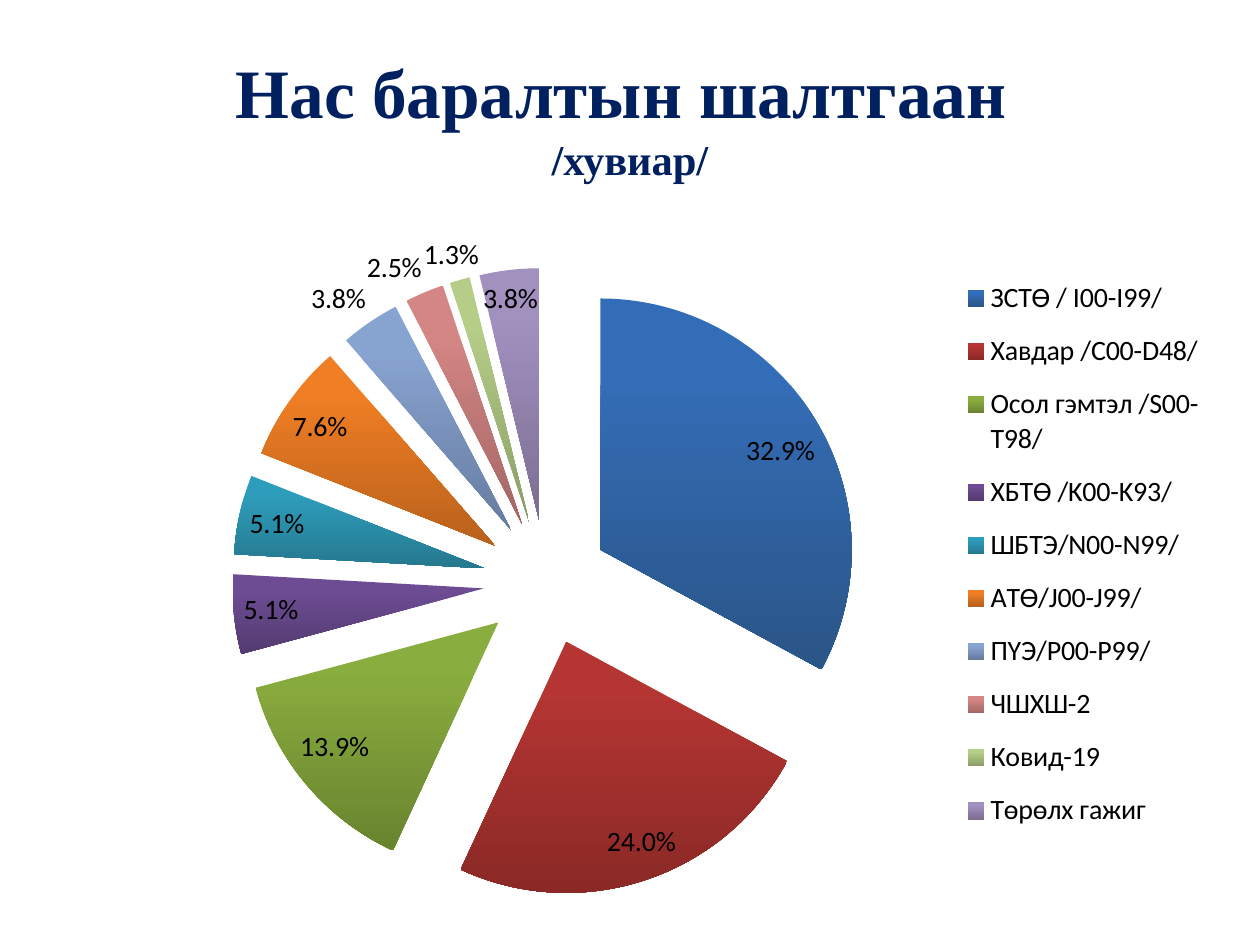
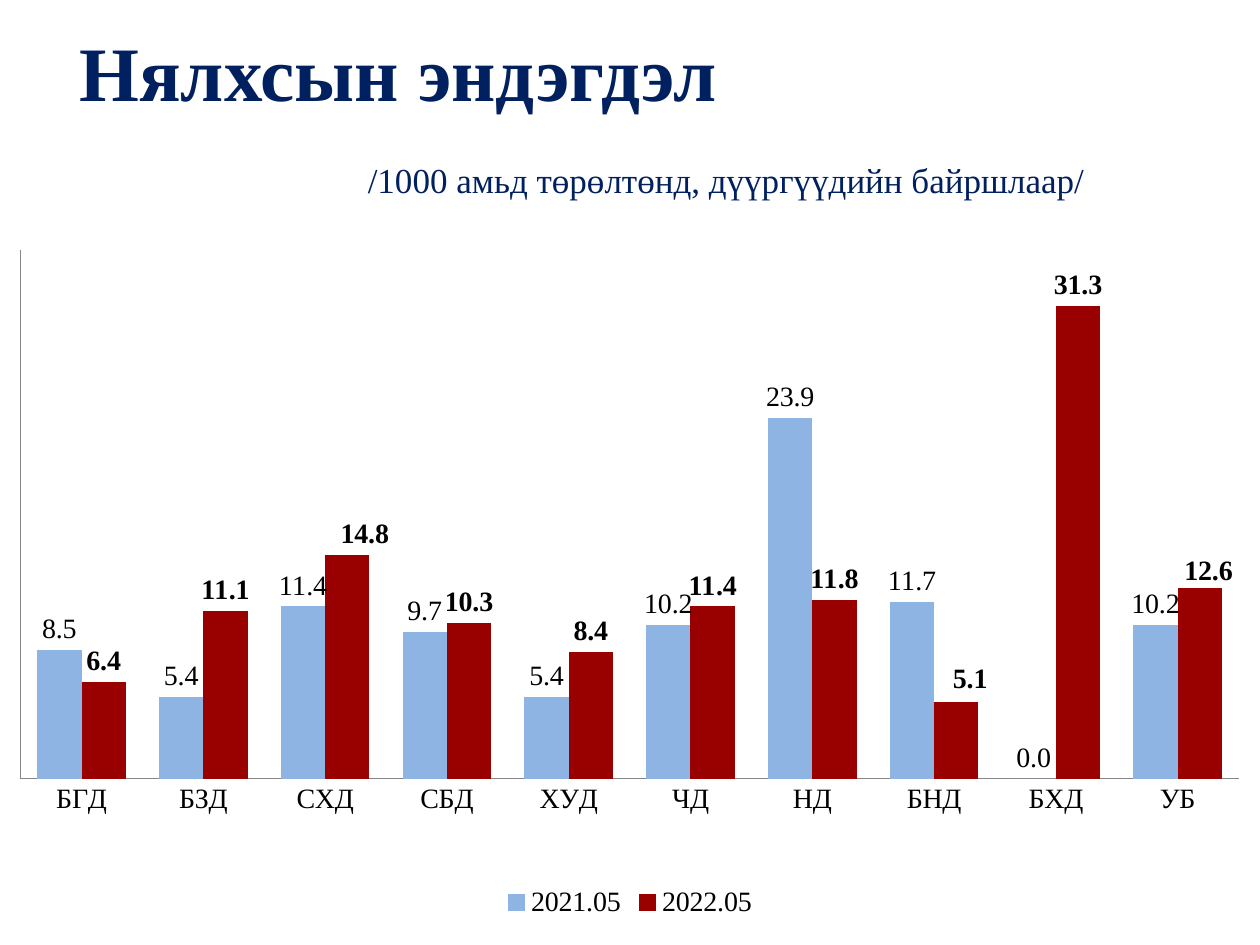
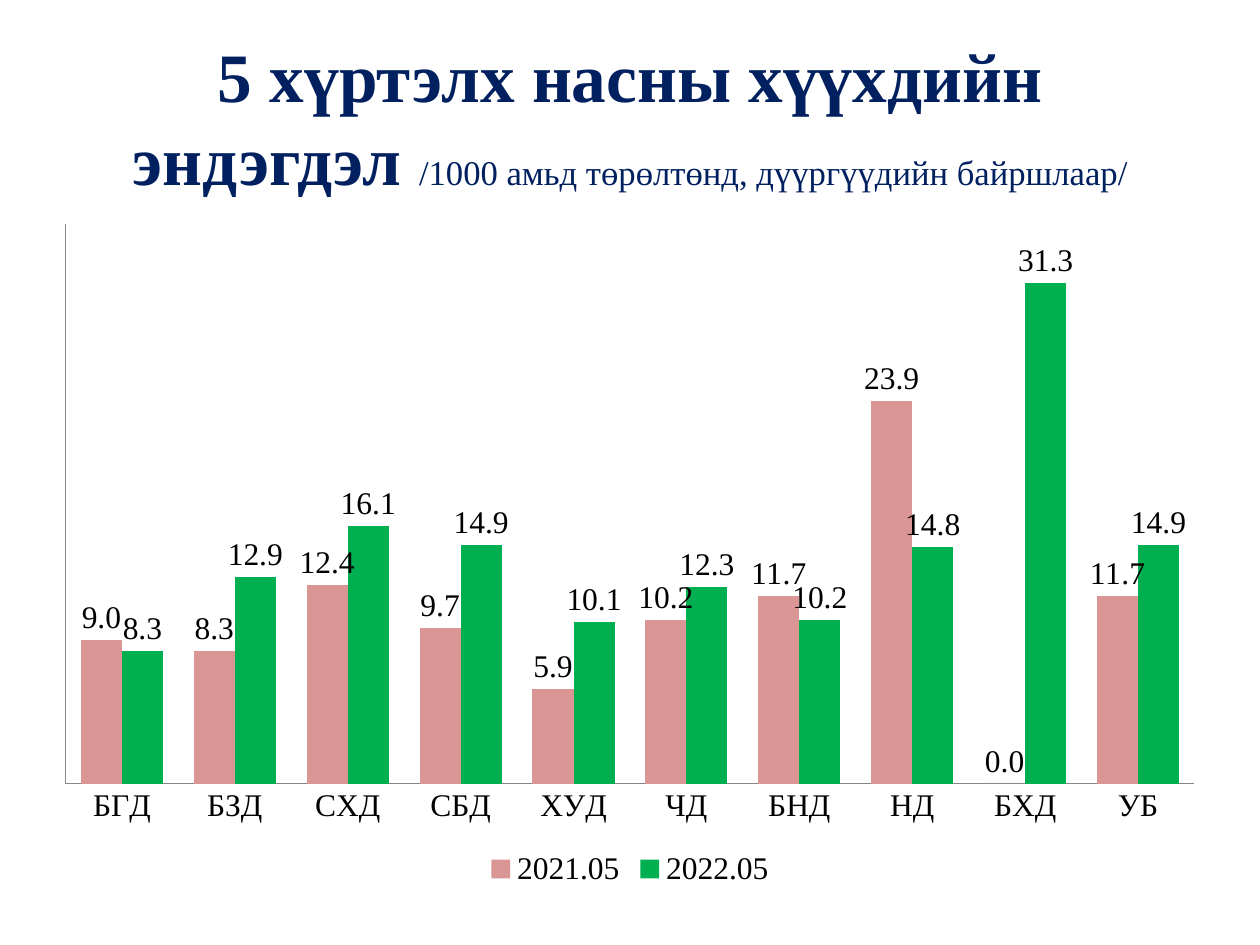
"""Three slides of mortality charts: causes, infants and children under five."""
from dataclasses import dataclass, field
from typing import NamedTuple

from pptx import Presentation, oxml, util as u
from pptx.chart import data as cd
from pptx.dml import color as dc
from pptx.enum import chart as ce, text as te
from pptx.oxml import ns

COLORS = {
    "title": "002060", "text": "000000", "axis": "868686",
    "infants_2021": "8EB4E3", "infants_2022": "990000",
    "under5_2021": "D99694", "under5_2022": "00B050",
}
TITLE_FONT = "Times New Roman"
YEARS = ("2021.05", "2022.05")


class Box(NamedTuple):
    left: float
    top: float
    width: float
    height: float

    def points(self) -> list[u.Pt]:
        return [u.Pt(v) for v in self]


class Run(NamedTuple):
    text: str
    size: float
    bold: bool = True


@dataclass
class Line:
    runs: list[Run]
    align: te.PP_ALIGN = te.PP_ALIGN.CENTER
    indent: float = 0
    before: float = 0


class Cause(NamedTuple):
    name: str
    percent: float
    top_color: str
    bottom_color: str


class District(NamedTuple):
    name: str
    before: float
    now: float


@dataclass
class Columns:
    box: Box
    size: float
    districts: list[District]
    colors: tuple[str, str]
    bold_now: bool = False
    plot_box: Box | None = None
    shifts: dict[int, tuple[float, float]] = field(default_factory=dict)


CAUSES = [
    Cause("ЗСТӨ / I00-I99/", 32.9, "346DB7", "2A5587"),
    Cause("Хавдар /C00-D48/", 24, "B43532", "8A2926"),
    Cause("Осол гэмтэл /S00-T98/", 13.9, "8AAD3F", "69842F"),
    Cause("ХБТӨ /K00-K93/", 5.1, "6D4C93", "533B70"),
    Cause("ШБТЭ/N00-N99/", 5.1, "2E9DBB", "25788E"),
    Cause("АТӨ/J00-J99/", 7.6, "F07E24", "B8611C"),
    Cause("ПҮЭ/P00-P99/", 3.8, "87A3D0", "677CA0"),
    Cause("ЧШХШ-2", 2.5, "D48684", "A26665"),
    Cause("Ковид-19", 1.3, "B5CD87", "8A9D66"),
    Cause("Төрөлх гажиг", 3.8, "A290BF", "7B6E92"),
]
INFANTS = Columns(
    Box(0, 132, 720, 396), 16,
    [District("БГД", 8.5, 6.4), District("БЗД", 5.4, 11.1),
     District("СХД", 11.4, 14.8), District("СБД", 9.7, 10.3),
     District("ХУД", 5.4, 8.4), District("ЧД", 10.2, 11.4),
     District("НД", 23.9, 11.8), District("БНД", 11.7, 5.1),
     District("БХД", 0, 31.3), District("УБ", 10.2, 12.6)],
    ("infants_2021", "infants_2022"), bold_now=True,
    plot_box=Box(11.8, 11, 696, 302),
    shifts={2: (10, 0), 7: (8, -1), 9: (5, 2)},
)
UNDER_FIVE = Columns(
    Box(24, 120, 672, 390), 18,
    [District("БГД", 9, 8.3), District("БЗД", 8.3, 12.9),
     District("СХД", 12.4, 16.1), District("СБД", 9.7, 14.9),
     District("ХУД", 5.9, 10.1), District("ЧД", 10.2, 12.3),
     District("БНД", 11.7, 10.2), District("НД", 23.9, 14.8),
     District("БХД", 0, 31.3), District("УБ", 11.7, 14.9)],
    ("under5_2021", "under5_2022"),
)
PER_1000 = "/1000 амьд төрөлтөнд, дүүргүүдийн байршлаар/"


def rgb(value: str) -> dc.RGBColor:
    return dc.RGBColor.from_string(COLORS.get(value, value))


def element(tag: str, body: str = "", attrs: str = ""):
    return oxml.parse_xml(f"<c:{tag} {ns.nsdecls('c')} {attrs}>{body}</c:{tag}>")


def manual_layout(**values: object):
    body = "".join(f'<c:{k} val="{v}"/>' for k, v in values.items())
    return element("layout", f"<c:manualLayout>{body}</c:manualLayout>")


def place_part(parent, index: int, part: Box, frame: Box, **target: str) -> None:
    for old in parent.findall(ns.qn("c:layout")):
        parent.remove(old)
    parent.insert(index, manual_layout(
        **target, xMode="edge", yMode="edge",
        x=part.left / frame.width, y=part.top / frame.height,
        w=part.width / frame.width, h=part.height / frame.height))


def style_font(font, size: float, name: str, color: str = "text", bold: bool = False) -> None:
    font.size = u.Pt(size)
    font.name = name
    font.bold = bold
    font.color.rgb = rgb(color)


def add_title(s, box: Box, lines: list[Line]) -> None:
    tf = s.shapes.add_textbox(*box.points()).text_frame
    tf.word_wrap = True
    tf.vertical_anchor = te.MSO_ANCHOR.MIDDLE
    for i, line in enumerate(lines):
        p = tf.add_paragraph() if i else tf.paragraphs[0]
        p.alignment = line.align
        p.space_before = u.Pt(line.before)
        p._p.get_or_add_pPr().set("marL", str(u.Pt(line.indent)))
        for run in line.runs:
            r = p.add_run()
            r.text = run.text
            style_font(r.font, run.size, TITLE_FONT, "title", run.bold)


def add_chart(s, kind: ce.XL_CHART_TYPE, box: Box, data: cd.CategoryChartData,
              size: float, legend_size: float, font: str, legend: ce.XL_LEGEND_POSITION):
    chart = s.shapes.add_chart(kind, *box.points(), data).chart
    chart.has_title = False
    style_font(chart.font, size, font)
    chart.has_legend = True
    chart.legend.position = legend
    chart.legend.include_in_layout = False
    style_font(chart.legend.font, legend_size, font)
    return chart


def add_cause_pie(s, box: Box, legend_box: Box, causes: list[Cause]) -> None:
    data = cd.CategoryChartData()
    data.categories = [c.name for c in causes]
    data.add_series("Series 1", [c.percent for c in causes])
    chart = add_chart(s, ce.XL_CHART_TYPE.PIE, box, data, 14, 16, "Calibri",
                      ce.XL_LEGEND_POSITION.RIGHT)
    place_part(chart.legend._element, 1, legend_box, box)
    plot = chart.plots[0]
    plot.vary_by_categories = True
    series = plot.series[0]
    series._element.find(ns.qn("c:tx")).addnext(element("explosion", attrs='val="25"'))
    for i, cause in enumerate(causes):
        fill = series.points[i].format.fill
        fill.gradient()
        fill.gradient_angle = 270
        for stop, color in zip(fill.gradient_stops, (cause.top_color, cause.bottom_color)):
            stop.color.rgb = rgb(color)
        fill.gradient_stops[0].position = 0.2
    labels = series.data_labels
    labels.show_value = False
    labels.show_percentage = True
    labels.number_format = "0.0%"
    labels.number_format_is_linked = False
    labels.position = ce.XL_LABEL_POSITION.BEST_FIT
    style_font(labels.font, 16, "Calibri")


def style_axes(chart) -> None:
    for axis in (chart.category_axis, chart.value_axis):
        axis.has_major_gridlines = False
        axis.major_tick_mark = axis.minor_tick_mark = ce.XL_TICK_MARK.NONE
        axis.format.line.color.rgb = rgb("axis")
        axis.format.line.width = u.Pt(0.75)
    chart.value_axis.tick_label_position = ce.XL_TICK_LABEL_POSITION.NONE
    chart.value_axis.minimum_scale = 0
    chart.value_axis.maximum_scale = 35


def add_district_columns(s, spec: Columns) -> None:
    data = cd.CategoryChartData(number_format="0.0")
    data.categories = [d.name for d in spec.districts]
    data.add_series(YEARS[0], [d.before for d in spec.districts])
    data.add_series(YEARS[1], [d.now for d in spec.districts])
    chart = add_chart(s, ce.XL_CHART_TYPE.COLUMN_CLUSTERED, spec.box, data, spec.size,
                      spec.size, TITLE_FONT, ce.XL_LEGEND_POSITION.BOTTOM)
    style_axes(chart)
    plot = chart.plots[0]
    plot.gap_width = 75
    plot.overlap = 0
    plot.vary_by_categories = False
    for series, color, bold in zip(plot.series, spec.colors, (False, spec.bold_now)):
        series.format.fill.solid()
        series.format.fill.fore_color.rgb = rgb(color)
        labels = series.data_labels
        labels.show_value = True
        labels.number_format = "0.0"
        labels.number_format_is_linked = False
        labels.position = ce.XL_LABEL_POSITION.OUTSIDE_END
        style_font(labels.font, spec.size, TITLE_FONT, bold=bold)
    for i, (dx, dy) in spec.shifts.items():
        label = plot.series[1].points[i].data_label
        style_font(label.font, spec.size, TITLE_FONT, bold=spec.bold_now)
        label.position = ce.XL_LABEL_POSITION.OUTSIDE_END
        idx = label._get_or_add_dLbl().find(ns.qn("c:idx"))
        idx.addnext(manual_layout(x=dx / spec.box.width, y=dy / spec.box.height))
    if spec.plot_box:
        place_part(chart._chartSpace.chart.plotArea, 0, spec.plot_box, spec.box,
                   layoutTarget="inner")


def main() -> None:
    prs = Presentation()
    prs.slide_width, prs.slide_height = u.Pt(720), u.Pt(540)
    causes, infants, under_five = (prs.slides.add_slide(prs.slide_layouts[6]) for _ in range(3))

    add_title(causes, Box(36, 21.6, 648, 90), [Line([Run("Нас баралтын шалтгаан ", 39.6)]),
                                               Line([Run("/хувиар/", 24.3)])])
    add_cause_pie(causes, Box(36, 120, 666, 402), Box(510, 30, 146, 334), CAUSES)

    add_title(infants, Box(36, 19.4, 648, 90), [
        Line([Run("Нялхсын эндэгдэл", 44)], te.PP_ALIGN.LEFT, indent=2.3),
        Line([Run(PER_1000, 20, False)], indent=110, before=24),
    ])
    add_district_columns(infants, INFANTS)

    add_title(under_five, Box(24, 21.6, 672, 90), [
        Line([Run("5 хүртэлх насны хүүхдийн эндэгдэл ", 39.6), Run(PER_1000, 19.8, False)]),
    ])
    add_district_columns(under_five, UNDER_FIVE)
    prs.save("out.pptx")


if __name__ == "__main__":
    main()
